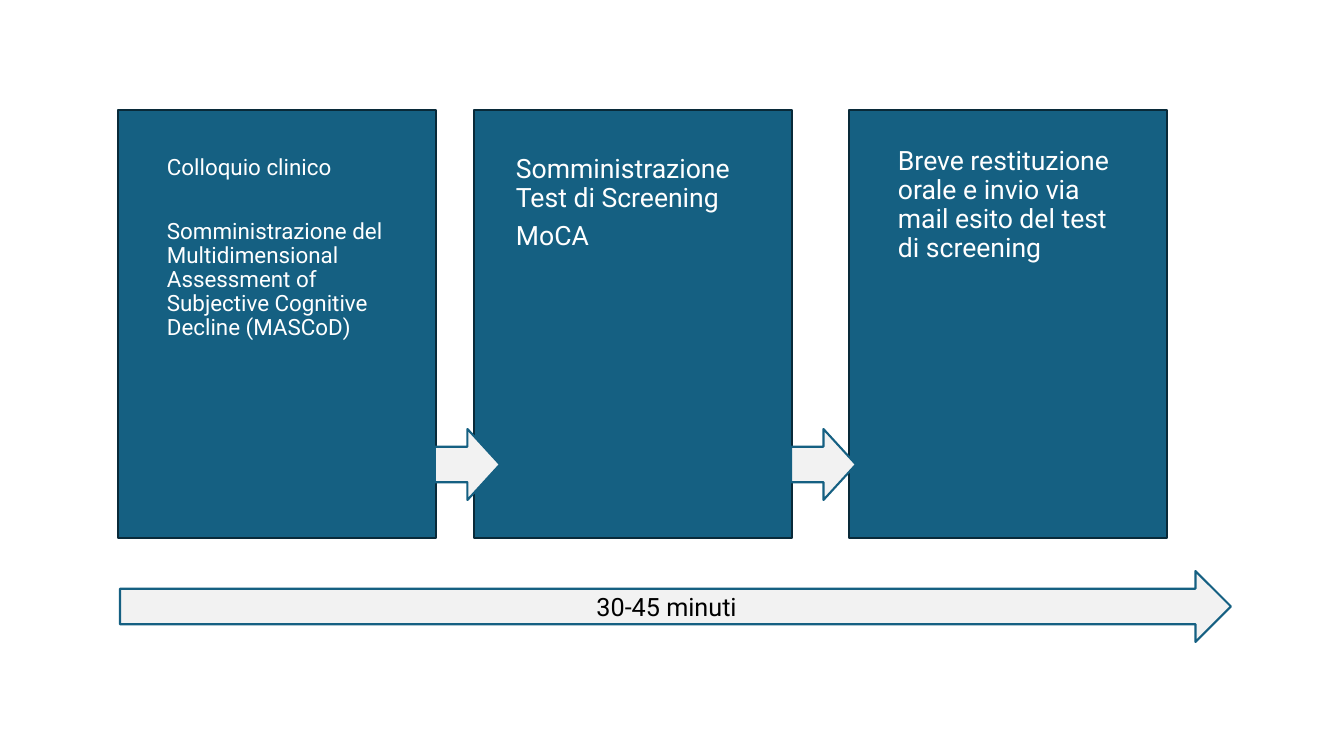
from pptx import Presentation
from pptx.dml.color import RGBColor
from pptx.enum.shapes import MSO_SHAPE as SHAPE
from pptx.enum.text import MSO_ANCHOR as ANCHOR, PP_ALIGN as ALIGN
from pptx.util import Emu, Pt

PX = 914400 / 100.8
FONT = "Roboto"
COLORS = {
    "card": "156082",
    "card_line": "092A39",
    "arrow": "F2F2F2",
    "white": "FFFFFF",
    "black": "000000",
}

CARD_TOP, CARD_W, CARD_H = 110, 318, 428
ARROW_H = 71

# Card left, text left, text top, text width, font size, space after, paragraphs
STEPS = [
    (118, 167, 149, 242, 16, 28.4, [
        "Colloquio clinico",
        "Somministrazione del Multidimensional Assessment of "
        "Subjective Cognitive Decline (MASCoD)",
    ]),
    (474, 516, 149, 218, 19, 6.65, [
        "Somministrazione Test di Screening",
        "MoCA",
    ]),
    (849, 898, 141, 218, 19, 6.65, [
        "Breve restituzione orale e invio via mail esito del test di screening",
    ]),
]


def px(n):
    return Emu(round(n * PX))


def rgb(name):
    return RGBColor.from_string(COLORS[name])


def set_font(p, size, color):
    p.font.name = FONT
    p.font.size = Pt(size)
    p.font.color.rgb = rgb(color)


def add_block(s, kind, x, y, w, h, fill, line):
    sp = s.shapes.add_shape(kind, px(x), px(y), px(w), px(h))
    sp.shadow.inherit = False
    sp.fill.solid()
    sp.fill.fore_color.rgb = rgb(fill)
    sp.line.color.rgb = rgb(line)
    sp.line.width = Pt(1.5)
    return sp


def add_arrow(s, x, y, w):
    return add_block(s, SHAPE.RIGHT_ARROW, x, y, w, ARROW_H, "arrow", "card")


def add_text(s, x, y, w, h, size, gap, lines):
    tf = s.shapes.add_textbox(px(x), px(y), px(w), px(h)).text_frame
    tf.word_wrap = True
    tf.margin_left = tf.margin_right = tf.margin_bottom = 0
    tf.margin_top = px(7)
    for i, line in enumerate(lines):
        p = tf.add_paragraph() if i else tf.paragraphs[0]
        p.text = line
        p.line_spacing = 0.9
        p.space_after = Pt(gap)
        set_font(p, size, "white")


def main():
    prs = Presentation()
    prs.slide_width, prs.slide_height = px(1344), px(756)
    s = prs.slides.add_slide(prs.slide_layouts[6])

    # Step cards
    for left, x, y, w, size, gap, lines in STEPS:
        add_block(s, SHAPE.RECTANGLE, left, CARD_TOP, CARD_W, CARD_H,
                  "card", "card_line")
        add_text(s, x, y, w, 350, size, gap, lines)

    # Arrows from each card to the next
    for left, *_ in STEPS[:-1]:
        add_arrow(s, left + CARD_W - 1, 429, 65)

    # Overall duration
    tf = add_arrow(s, 120, 571, 1111).text_frame
    tf.vertical_anchor = ANCHOR.MIDDLE
    p = tf.paragraphs[0]
    p.text = "30-45 minuti"
    p.alignment = ALIGN.CENTER
    set_font(p, 18, "black")

    prs.save("out.pptx")


if __name__ == "__main__":
    main()
